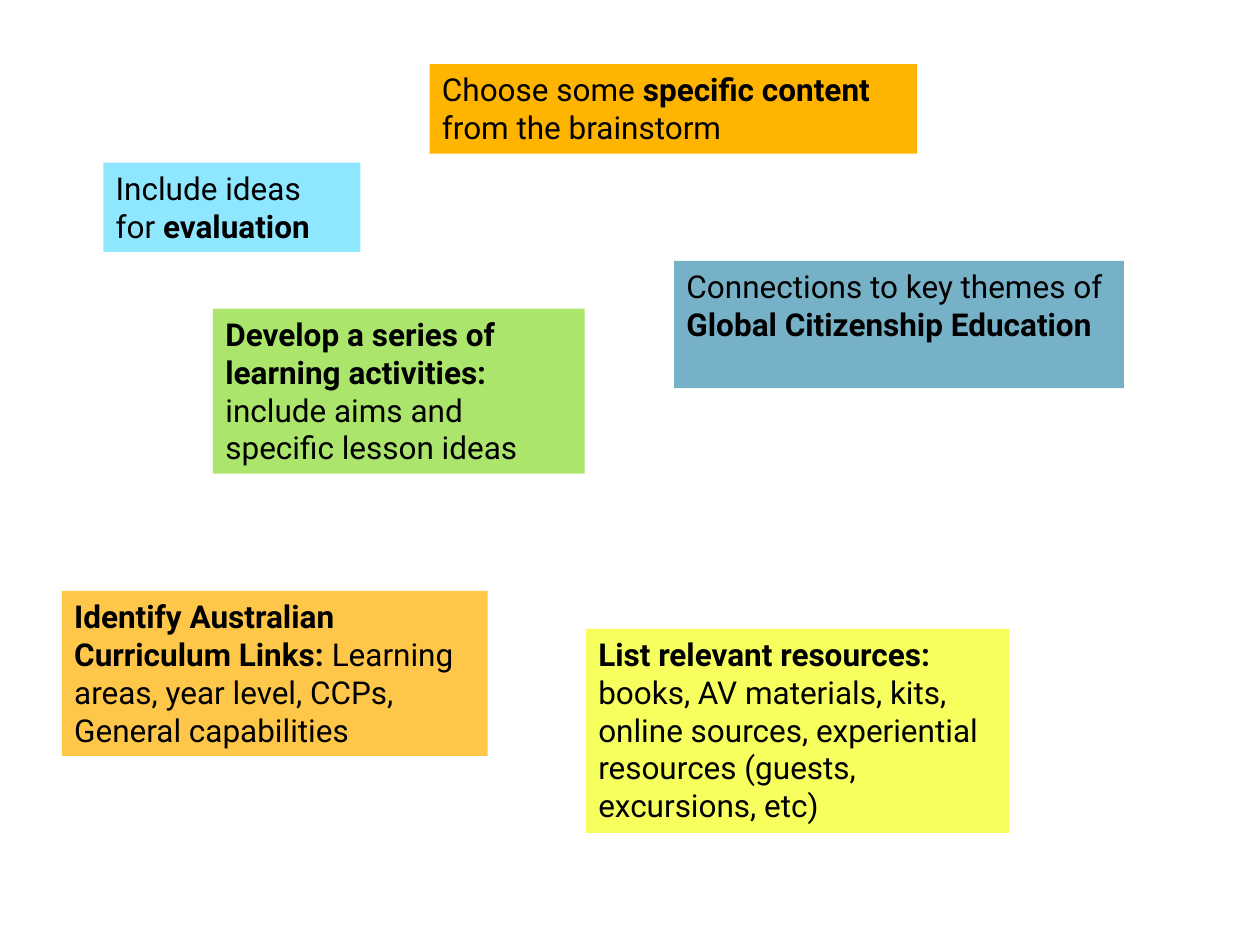
from dataclasses import dataclass

from pptx import Presentation
from pptx import util as u
from pptx.dml.color import RGBColor
from pptx.enum import shapes, text

COLOURS = {
    "text": "000000",
    "activities": "ABE56B",
    "content": "FFB400",
    "connections": "76B1C7",
    "evaluation": "8EE7FF",
    "resources": "F6FF5D",
    "curriculum": "FFC74A",
}


@dataclass(frozen=True)
class Phrase:
    wording: str
    bold: bool = False


@dataclass(frozen=True)
class Card:
    colour: str
    left: float
    top: float
    width: float
    height: float
    phrases: tuple[Phrase, ...]


CARDS = (
    Card("activities", 1.69, 2.45, 2.95, 1.31, (
        Phrase("Develop a series of learning activities: ", True),
        Phrase("include aims and specific lesson ideas"),
    )),
    Card("content", 3.41, 0.51, 3.87, 0.71, (
        Phrase("Choose some "),
        Phrase("specific content ", True),
        Phrase("from the brainstorm"),
    )),
    Card("connections", 5.35, 2.07, 3.57, 1.01, (
        Phrase("Connections to key themes of "),
        Phrase("Global Citizenship Education", True),
    )),
    Card("evaluation", 0.82, 1.29, 2.04, 0.71, (
        Phrase("Include ideas for "),
        Phrase("evaluation", True),
    )),
    Card("resources", 4.65, 4.99, 3.36, 1.62, (
        Phrase("List relevant resources:", True),
        Phrase(" books, AV materials, kits, online sources, "
               "experiential resources (guests, excursions, etc)"),
    )),
    Card("curriculum", 0.49, 4.69, 3.38, 1.31, (
        Phrase("Identify Australian Curriculum Links: ", True),
        Phrase("Learning areas, year level, CCPs, General capabilities"),
    )),
)


def rgb(name: str) -> RGBColor:
    return RGBColor.from_string(COLOURS[name])


def draw_card(slide, card: Card) -> None:
    panel = slide.shapes.add_shape(
        shapes.MSO_SHAPE.RECTANGLE,
        u.Inches(card.left), u.Inches(card.top),
        u.Inches(card.width), u.Inches(card.height),
    )
    panel.shadow.inherit = False
    panel.fill.solid()
    panel.fill.fore_color.rgb = rgb(card.colour)
    panel.line.fill.background()

    frame = panel.text_frame
    frame.word_wrap = True
    frame.auto_size = text.MSO_AUTO_SIZE.NONE
    frame.vertical_anchor = text.MSO_ANCHOR.TOP
    frame.margin_right = u.Inches(0.14)

    instruction = frame.paragraphs[0]
    instruction.alignment = text.PP_ALIGN.LEFT
    instruction.font.name = "Roboto"
    instruction.font.size = u.Pt(18)
    instruction.font.color.rgb = rgb("text")
    for phrase in card.phrases:
        wording = instruction.add_run()
        wording.text = phrase.wording
        wording.font.bold = phrase.bold


def main() -> None:
    deck = Presentation()
    deck.slide_width = u.Inches(10)
    deck.slide_height = u.Inches(7.5)
    slide = deck.slides.add_slide(deck.slide_layouts[6])
    for card in CARDS:
        draw_card(slide, card)
    deck.save("out.pptx")


if __name__ == "__main__":
    main()
